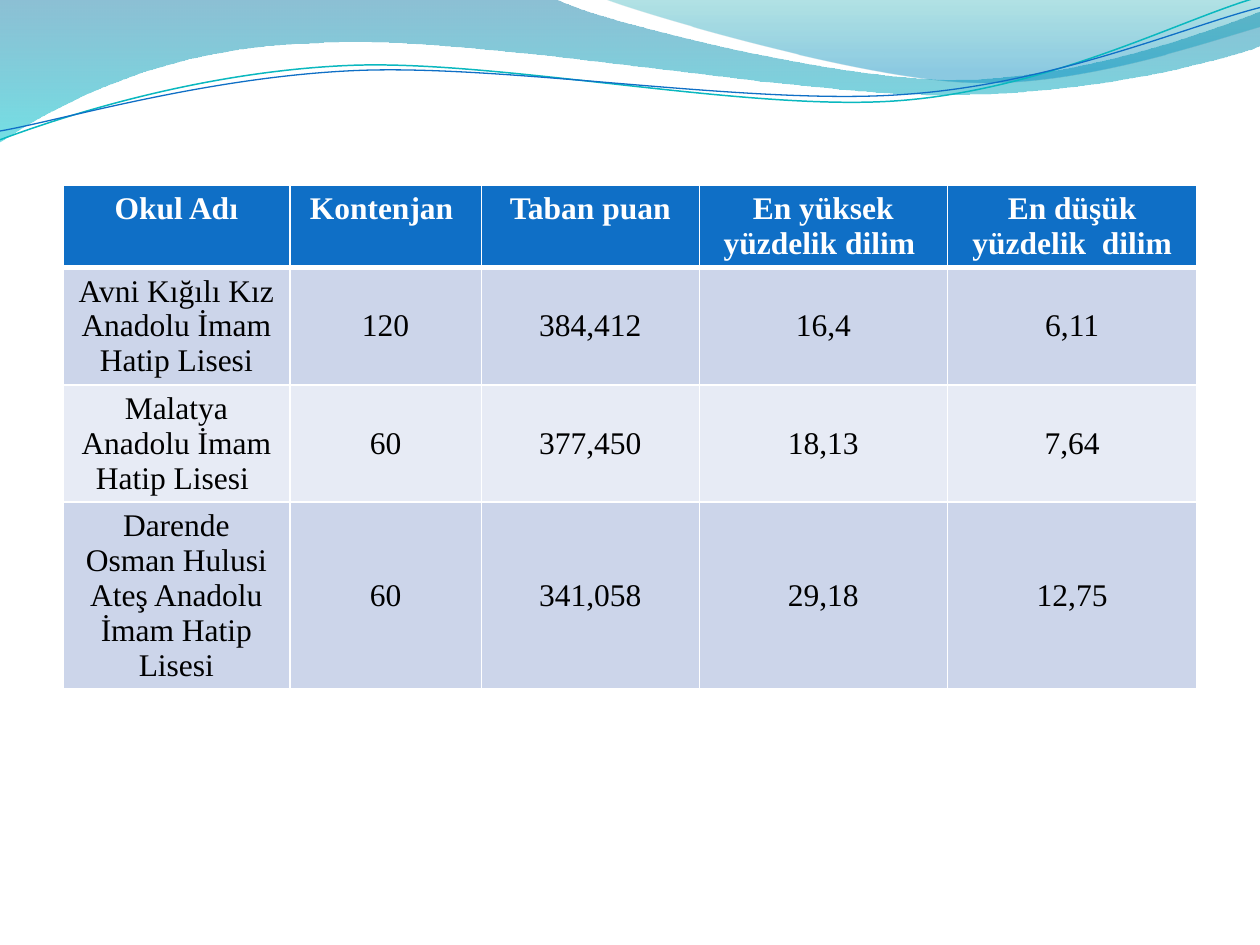
from lxml.etree import SubElement
from pptx import Presentation
from pptx.dml.color import RGBColor
from pptx.enum.text import MSO_ANCHOR, PP_ALIGN
from pptx.oxml.ns import qn
from pptx.util import Inches, Pt

FONT = "Times New Roman"
COLORS = {
    "header": "0F6FC6", "band_dark": "CCD5EA", "band_light": "E7EBF5",
    "white": "FFFFFF", "black": "000000",
    "deep_blue": "0074A1", "cyan": "00C6CF", "teal": "00A1A9",
    "sky": "008BBF", "teal_line": "0AB8BF", "blue_line": "0F6FC6",
}

ROWS = [
    ["Okul Adı", "Kontenjan ", "Taban puan", "En yüksek yüzdelik dilim ",
     "En düşük yüzdelik  dilim"],
    ["Avni Kığılı Kız Anadolu İmam Hatip Lisesi", "120", "384,412", "16,4", "6,11"],
    ["Malatya Anadolu İmam Hatip Lisesi ", "60", "377,450", "18,13", "7,64"],
    ["Darende Osman Hulusi Ateş Anadolu İmam Hatip Lisesi", "60", "341,058",
     "29,18", "12,75"],
]
COLUMN_WIDTHS = [1.8, 1.52, 1.73, 1.97, 1.98]
MIN_ROW_HEIGHT = 0.41  # rows grow with their text
TABLE_LEFT, TABLE_TOP, TABLE_HEIGHT = 0.5, 1.47, 4.3

# Outlines: a start point, then segments of one point (line) or three (Bezier curve).
# Gradient stops: position, colour, opacity in percent.
WAVES = [
    {"outline": [(0, 0), [(4.4, -0.01)],
                 [(4.76, 0.17), (6.64, 0.63), (7.58, 0.63)],
                 [(8.53, 0.63), (9.58, 0.26), (10, 0.09)],
                 [(10.01, 0.36)],
                 [(9.83, 0.44), (8.7, 0.76), (7.46, 0.75)],
                 [(6.22, 0.75), (3.82, 0.28), (2.57, 0.34)],
                 [(1.29, 0.36), (0.46, 0.83), (-0.01, 1.13)],
                 [(0, 0)]],
     "stops": [(0, "deep_blue", 45), (1, "cyan", 55)]},
    {"outline": [(4.79, -0.01),
                 [(5.09, 0.11), (6.82, 0.62), (7.69, 0.65)],
                 [(8.56, 0.69), (9.61, 0.32), (10, 0.21)],
                 [(10, 0)], [(4.79, -0.01)]],
     "stops": [(0, "teal", 30), (0.8, "sky", 45)]},
]
STRANDS = [
    {"outline": [(0, 1.11),
                 [(0.48, 0.93), (1.58, 0.57), (2.77, 0.52)],
                 [(3.95, 0.47), (5.93, 0.89), (7.13, 0.8)],
                 [(8.33, 0.71), (9.38, 0.15), (9.98, -0.02)]],
     "color": "teal_line", "width": 0.85},
    {"outline": [(0, 1.04),
                 [(0.47, 0.96), (1.64, 0.61), (2.83, 0.56)],
                 [(4.03, 0.51), (5.97, 0.84), (7.17, 0.75)],
                 [(8.36, 0.67), (9.41, 0.21), (10, 0.06)]],
     "color": "blue_line", "width": 0.75},
]


def rgb(name):
    return RGBColor.from_string(COLORS[name])


def add_outline(slide, outline, closed):
    """Build a freeform, then turn each three-point segment into a Bezier curve."""
    start, *segments = outline
    points = [(Inches(x), Inches(y)) for segment in segments for x, y in segment]
    builder = slide.shapes.build_freeform(Inches(start[0]), Inches(start[1]))
    builder.add_line_segments(points, close=closed)
    shape = builder.convert_to_shape()
    shape.shadow.inherit = False
    lines = iter(list(shape._element.spPr.iter(qn("a:lnTo"))))
    for segment in segments:
        first, *others = [next(lines) for _ in segment]
        if others:
            curve = SubElement(first.getparent(), qn("a:cubicBezTo"))
            first.addprevious(curve)
            for line in (first, *others):
                curve.append(line[0])
                line.getparent().remove(line)
    return shape


def add_wave(slide, wave):
    shape = add_outline(slide, wave["outline"], closed=True)
    shape.line.fill.background()
    shape.fill.gradient()
    shape.fill.gradient_angle = 270
    for stop, (position, color, _) in zip(shape.fill.gradient_stops, wave["stops"]):
        stop.position = position
        stop.color.rgb = rgb(color)
    stop_colors = shape._element.spPr.iter(qn("a:srgbClr"))
    for element, (_, _, opacity) in zip(list(stop_colors), wave["stops"]):
        SubElement(element, qn("a:alpha"), val=str(opacity * 1000))


def add_strand(slide, strand):
    shape = add_outline(slide, strand["outline"], closed=False)
    shape.fill.background()
    shape.line.color.rgb = rgb(strand["color"])
    shape.line.width = Pt(strand["width"])


def set_borders(cell, top, bottom):
    """Draw white cell borders; top and bottom are widths in points."""
    properties = cell._tc.get_or_add_tcPr()
    widths = {"a:lnL": 1, "a:lnR": 1, "a:lnT": top, "a:lnB": bottom}
    for tag, width in widths.items():
        line = SubElement(properties, qn(tag), w=str(Pt(width)))
        fill = SubElement(line, qn("a:solidFill"))
        SubElement(fill, qn("a:srgbClr"), val=COLORS["white"])


def fill_cell(cell, text, row):
    is_header = row == 0
    set_borders(cell, top=3 if row == 1 else 1, bottom=3 if is_header else 1)
    cell.fill.solid()
    band = "band_dark" if row % 2 else "band_light"
    cell.fill.fore_color.rgb = rgb("header" if is_header else band)
    cell.vertical_anchor = MSO_ANCHOR.TOP if is_header else MSO_ANCHOR.MIDDLE
    paragraph = cell.text_frame.paragraphs[0]
    paragraph.alignment = PP_ALIGN.CENTER
    run = paragraph.add_run()
    run.text = text
    run.font.name = FONT
    run.font.size = Pt(18)
    run.font.bold = is_header
    run.font.color.rgb = rgb("white" if is_header else "black")


def add_school_table(slide):
    frame = slide.shapes.add_table(
        len(ROWS), len(COLUMN_WIDTHS), Inches(TABLE_LEFT), Inches(TABLE_TOP),
        Inches(sum(COLUMN_WIDTHS)), Inches(TABLE_HEIGHT))
    table = frame.table
    for column, width in zip(table.columns, COLUMN_WIDTHS):
        column.width = Inches(width)
    for row in table.rows:
        row.height = Inches(MIN_ROW_HEIGHT)
    frame.height = Inches(TABLE_HEIGHT)
    for row, texts in enumerate(ROWS):
        for column, text in enumerate(texts):
            fill_cell(table.cell(row, column), text, row)


def main():
    presentation = Presentation()
    presentation.slide_width, presentation.slide_height = Inches(10), Inches(7.5)
    slide = presentation.slides.add_slide(presentation.slide_layouts[6])
    for wave in WAVES:
        add_wave(slide, wave)
    for strand in STRANDS:
        add_strand(slide, strand)
    add_school_table(slide)
    presentation.save("out.pptx")


if __name__ == "__main__":
    main()
